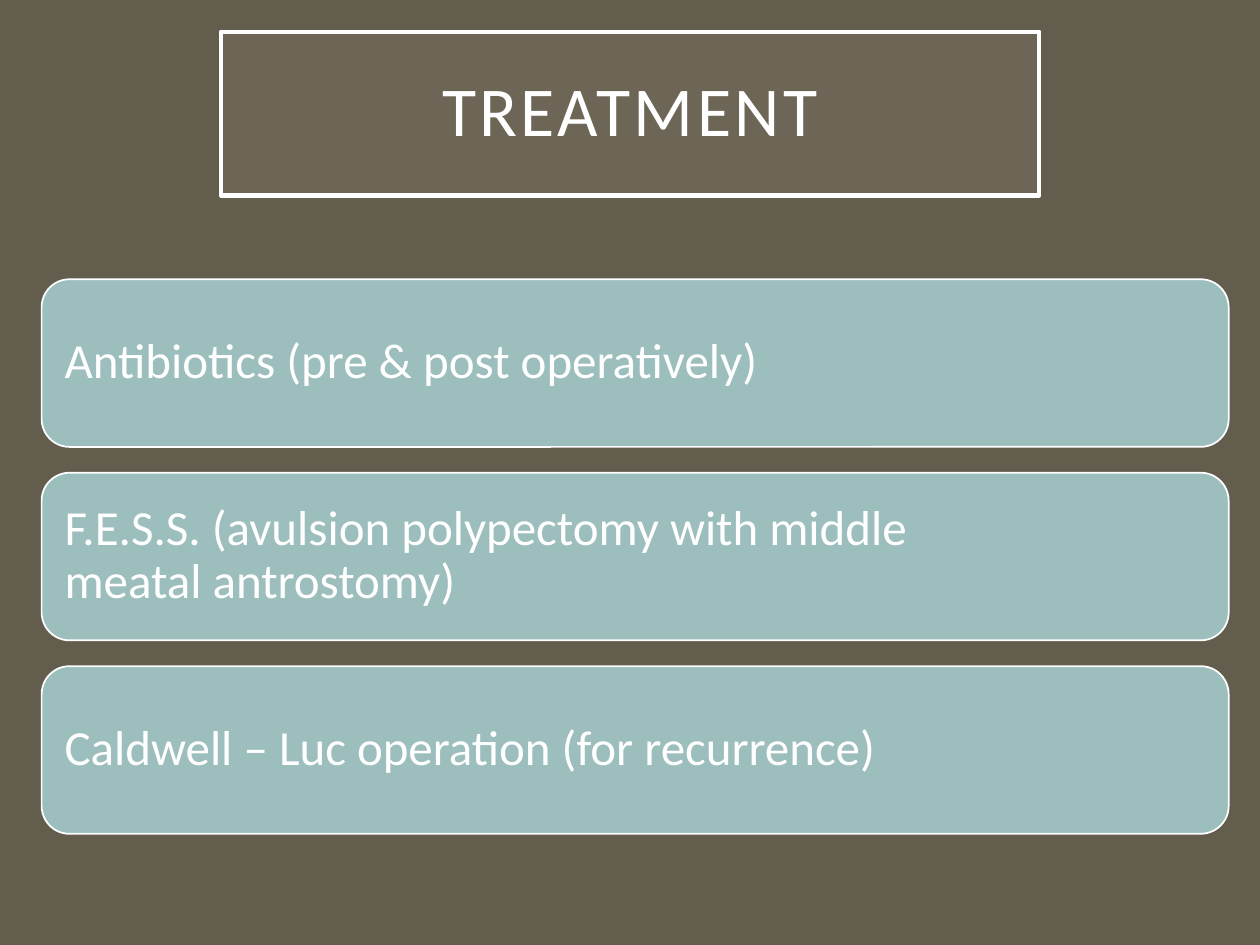
from lxml import etree
from pptx import Presentation
from pptx.dml.color import RGBColor
from pptx.enum.shapes import MSO_SHAPE
from pptx.enum.text import MSO_ANCHOR, PP_ALIGN
from pptx.oxml.ns import qn
from pptx.util import Cm, Pt

RECTANGLE = MSO_SHAPE.RECTANGLE
ROUNDED = MSO_SHAPE.ROUNDED_RECTANGLE
MIDDLE = MSO_ANCHOR.MIDDLE
LEFT, CENTER = PP_ALIGN.LEFT, PP_ALIGN.CENTER

COLORS = {
    "background": "635D4D",
    "banner": "A7A08E",
    "card": "9CBEBD",
    "white": "FFFFFF",
}
TREATMENTS = [
    "Antibiotics (pre & post operatively)",
    "F.E.S.S. (avulsion polypectomy with middle\vmeatal antrostomy)",
    "Caldwell – Luc operation (for recurrence)",
]


def color(name):
    return RGBColor.from_string(COLORS[name])


def set_all(target, values):
    for name, value in values.items():
        setattr(target, name, value)


def add_panel(slide, outline, box, fill, border, text, size, align, inset):
    panel = slide.shapes.add_shape(outline, *map(Cm, box))
    panel.shadow.inherit = False
    panel.fill.solid()
    panel.fill.fore_color.rgb = color(fill)
    panel.line.color.rgb = color("white")
    panel.line.width = Pt(border)
    frame = panel.text_frame
    set_all(frame, {
        "text": text,
        "word_wrap": True,
        "vertical_anchor": MIDDLE,
        "margin_left": Cm(inset),
        "margin_top": Cm(inset),
        "margin_right": Cm(inset),
        "margin_bottom": Cm(inset),
    })
    paragraph = frame.paragraphs[0]
    set_all(paragraph, {"alignment": align, "line_spacing": 0.9})
    for run in paragraph.runs:
        set_all(run.font, {"name": "Calibri", "size": Pt(size)})
        run.font.color.rgb = color("white")
    return panel


def add_banner(slide, box, heading):
    banner = add_panel(slide, RECTANGLE, box, "banner", 2.5, heading, 40, CENTER, 0.5)
    tint = banner.fill._xPr.find(qn("a:solidFill"))[0]
    etree.SubElement(tint, qn("a:alpha")).set("val", "15000")
    for run in banner.text_frame.paragraphs[0].runs:
        run.font._element.set("spc", "200")


def add_treatment_cards(slide, box, treatments, gap=0.52):
    left, top, width, height = box
    card_height = (height - gap * (len(treatments) - 1)) / len(treatments)
    for index, treatment in enumerate(treatments):
        card_top = top + index * (card_height + gap)
        add_panel(slide, ROUNDED, (left, card_top, width, card_height),
                  "card", 1, treatment, 28, LEFT, 0.3)


def main():
    deck = Presentation()
    deck.slide_width, deck.slide_height = Cm(25.4), Cm(19.05)
    slide = deck.slides.add_slide(deck.slide_layouts[6])
    slide.background.fill.solid()
    slide.background.fill.fore_color.rgb = color("background")
    add_banner(slide, (4.45, 0.64, 16.5, 3.3), "TREATMENT")
    add_treatment_cards(slide, (0.84, 5.63, 23.93, 11.18), TREATMENTS)
    deck.save("out.pptx")


if __name__ == "__main__":
    main()
